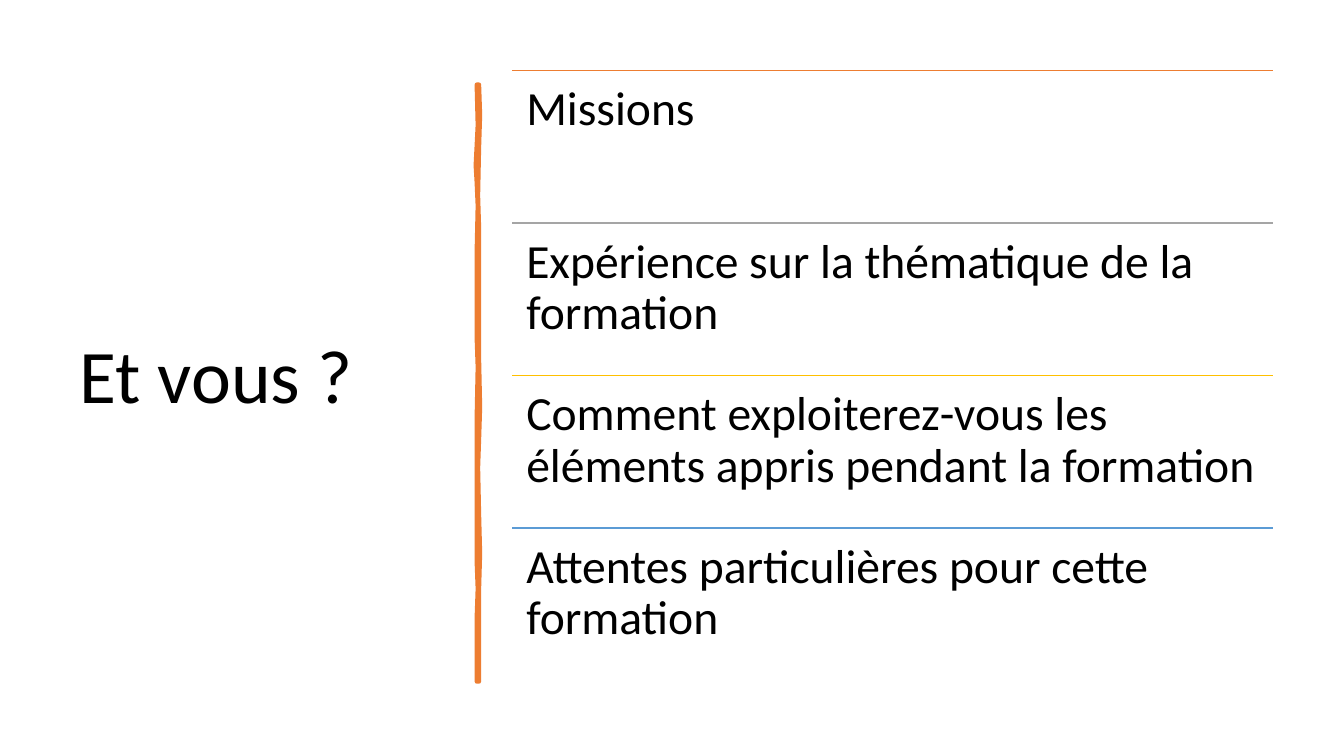
import pptx
import pptx.dml.color
import pptx.enum.shapes
import pptx.enum.text
import pptx.util
from lxml import etree
from pptx.util import Inches

COLORS = {
    "text": "000000",
    "orange": "ED7D31",
    "gray": "A5A5A5",
    "gold": "FFC000",
    "blue": "5B9BD5",
}
FONT = "Calibri"
QUESTIONS = [
    ("Missions", "orange"),
    ("Expérience sur la thématique de la formation", "gray"),
    ("Comment exploiterez-vous les éléments appris pendant la formation", "gold"),
    ("Attentes particulières pour cette formation", "blue"),
]
RIGHT_EDGE = [(0.02, 0), (0.03, 0.3), (0.02, 0.62), (0.01, 1.1), (0.02, 1.42),
              (0.02, 2.1), (0.02, 2.72), (0.03, 3.2), (0.02, 3.52), (0.01, 3.8),
              (0.02, 4.26), (0.03, 4.65), (0.02, 5), (0.02, 5.92)]
LEFT_EDGE = [(0, 5.92), (0, 5.29), (0.01, 5), (0, 4.73), (0, 3.93), (0, 3.31),
             (0.01, 2.8), (0, 2.51), (0, 1.66), (0.01, 1.2), (0, 0.97),
             (-0.01, 0.8), (0.01, 0.4), (0, 0)]


def rgb(name):
    """Return the named colour."""
    return pptx.dml.color.RGBColor.from_string(COLORS[name])


def add_text(slide, box, text, size, anchor, inset_x, inset_y):
    """Place one wrapped paragraph in the box."""
    shape = slide.shapes.add_textbox(*(Inches(length) for length in box))
    frame = shape.text_frame
    frame.text = text
    frame.word_wrap = True
    frame.vertical_anchor = anchor
    frame.margin_left = frame.margin_right = Inches(inset_x)
    frame.margin_top = frame.margin_bottom = Inches(inset_y)
    paragraph = frame.paragraphs[0]
    paragraph.line_spacing = 0.9
    font = paragraph.runs[0].font
    font.name = FONT
    font.size = pptx.util.Pt(size)
    font.color.rgb = rgb("text")


def add_title(slide, box):
    """Place the slide title, centred vertically in the box."""
    add_text(slide, box, "Et vous ?", 54,
             pptx.enum.text.MSO_ANCHOR.MIDDLE, 0.1, 0.05)


def add_brush_stroke(slide, left, top):
    """Draw the uneven vertical stroke downwards from its top left corner."""
    points = [(Inches(left + x), Inches(top + y))
              for x, y in RIGHT_EDGE + LEFT_EDGE]
    builder = slide.shapes.build_freeform(*points[0])
    builder.add_line_segments(points[1:], close=True)
    shape = builder.convert_to_shape()
    shape.shadow.inherit = False
    shape.fill.solid()
    shape.fill.fore_color.rgb = rgb("orange")
    shape.line.color.rgb = rgb("orange")
    shape.line.width = pptx.util.Pt(3.25)
    etree.SubElement(shape.line._get_or_add_ln(), pptx.oxml.ns.qn("a:round"))


def add_rule(slide, left, top, width, color):
    """Draw a thin horizontal rule."""
    connector = slide.shapes.add_connector(
        pptx.enum.shapes.MSO_CONNECTOR.STRAIGHT,
        Inches(left), Inches(top), Inches(left + width), Inches(top))
    connector.line.color.rgb = rgb(color)
    connector.line.width = pptx.util.Pt(1)
    etree.SubElement(connector._element.spPr, pptx.oxml.ns.qn("a:effectLst"))


def add_questions(slide, box):
    """Stack the questions in equal rows, each under its coloured rule."""
    left, top, width, height = box
    row_height = height / len(QUESTIONS)
    for index, (question, color) in enumerate(QUESTIONS):
        row_top = top + index * row_height
        add_rule(slide, left, row_top, width, color)
        add_text(slide, (left, row_top, width, row_height), question, 34,
                 pptx.enum.text.MSO_ANCHOR.TOP, 0.14, 0.14)


def main():
    """Build and save the presentation."""
    presentation = pptx.Presentation()
    presentation.slide_width = Inches(13.33)
    presentation.slide_height = Inches(7.5)
    slide = presentation.slides.add_slide(presentation.slide_layouts[6])
    add_title(slide, (0.69, 0.7, 3.74, 6.11))
    add_brush_stroke(slide, 4.73, 0.84)
    add_questions(slide, (5.08, 0.7, 7.55, 6.05))
    presentation.save("out.pptx")


if __name__ == "__main__":
    main()
